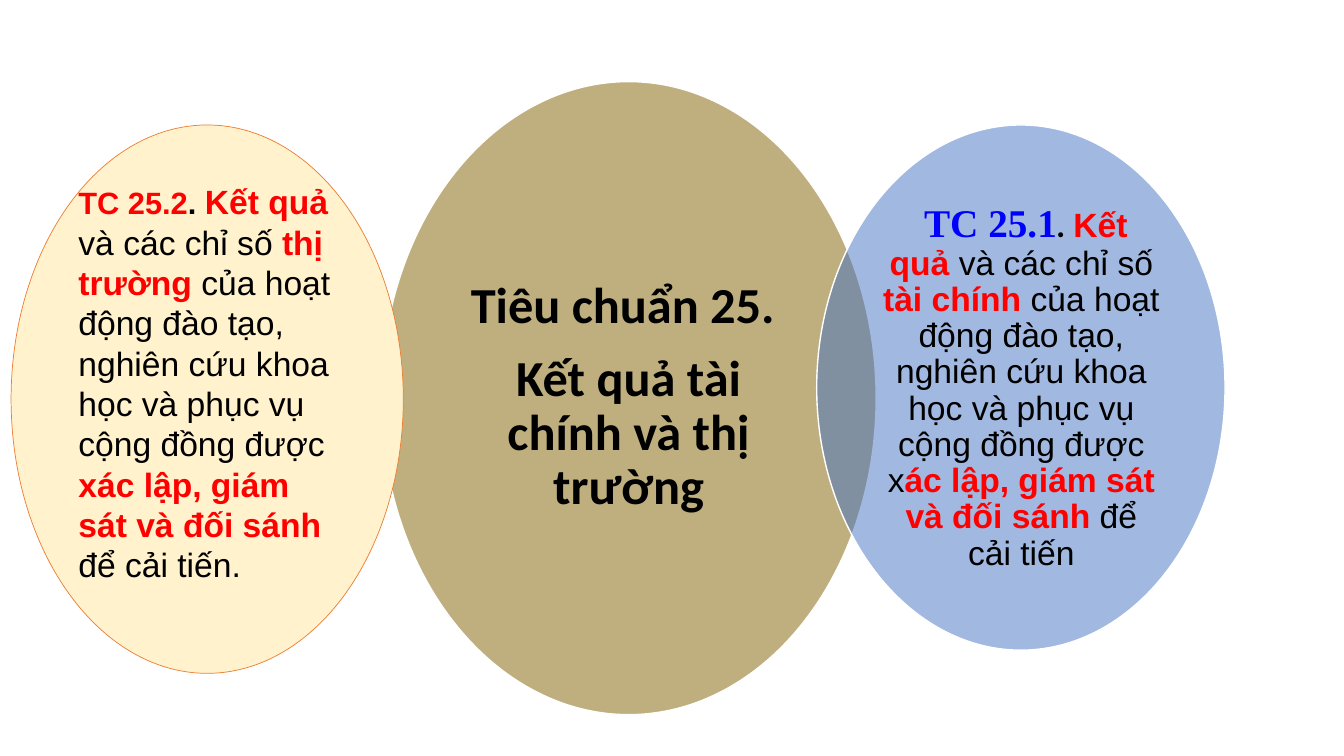
from lxml import etree
from pptx import Presentation
from pptx.dml.color import RGBColor
from pptx.enum.shapes import MSO_SHAPE
from pptx.enum.text import MSO_ANCHOR, PP_ALIGN
from pptx.oxml.ns import qn
from pptx.util import Inches, Pt

BLACK = RGBColor(0x00, 0x00, 0x00)
WHITE = RGBColor(0xFF, 0xFF, 0xFF)
RED = RGBColor(0xFF, 0x00, 0x00)
BLUE = RGBColor(0x00, 0x00, 0xFF)
OLIVE = RGBColor(0x80, 0x60, 0x00)
SKY = RGBColor(0x44, 0x72, 0xC4)
CREAM = RGBColor(0xFF, 0xF2, 0xCC)
ORANGE = RGBColor(0xED, 0x7D, 0x31)


def add_ellipse(page, left, top, width, height, fill, line, line_width, opacity=100):
    ellipse = page.shapes.add_shape(
        MSO_SHAPE.OVAL, Inches(left), Inches(top), Inches(width), Inches(height)
    )
    ellipse.shadow.inherit = False
    ellipse.fill.solid()
    ellipse.fill.fore_color.rgb = fill
    ellipse.line.color.rgb = line
    ellipse.line.width = Pt(line_width)
    if opacity < 100:
        color = ellipse.fill._xPr.find(qn("a:solidFill"))[0]
        etree.SubElement(color, qn("a:alpha")).set("val", str(opacity * 1000))
    return ellipse


def add_box(page, left, top, width, height):
    return page.shapes.add_textbox(
        Inches(left), Inches(top), Inches(width), Inches(height)
    )


def set_frame(box, inset, bottom=None):
    frame = box.text_frame
    frame.word_wrap = True
    frame.vertical_anchor = MSO_ANCHOR.MIDDLE
    frame.margin_left = frame.margin_right = Inches(inset[0])
    frame.margin_top = Inches(inset[1])
    frame.margin_bottom = Inches(inset[1] if bottom is None else bottom)
    return frame


def set_paragraph(para, align=PP_ALIGN.CENTER, spacing=0.9, after=0):
    para.alignment = align
    para.line_spacing = spacing
    para.space_after = Pt(after)
    return para


def add_span(para, text, size=24, font="Arial", color=BLACK, bold=False, italic=False):
    span = para.add_run()
    span.text = text
    span.font.size = Pt(size)
    span.font.name = font
    span.font.color.rgb = color
    span.font.bold = bold
    span.font.italic = italic


def add_phrases(para, phrases):
    for text, is_key in phrases:
        add_span(para, text, color=RED if is_key else BLACK, bold=is_key)


def add_standard(page):
    add_ellipse(page, 3.78, 0.81, 4.91, 6.28, OLIVE, WHITE, 1, opacity=50)
    frame = set_frame(add_box(page, 4.5, 1.73, 3.47, 4.44), (0.05, 0.05))
    heading = set_paragraph(frame.paragraphs[0], after=12.6)
    title = set_paragraph(frame.add_paragraph(), after=12.6)
    add_span(heading, "Tiêu chuẩn 25. ", size=36, font="Calibri", bold=True)
    add_span(title, "Kết quả tài chính và thị trường", size=36, font="Calibri", bold=True)


def add_finance_criterion(page):
    add_ellipse(page, 8.1, 1.24, 4.05, 5.21, SKY, WHITE, 1, opacity=50)
    frame = set_frame(add_box(page, 8.7, 2.01, 2.86, 3.68), (0.04, 0.04))
    para = set_paragraph(frame.paragraphs[0], after=8.4)
    add_span(para, " TC 25.1", size=28, font="Times New Roman", color=BLUE, bold=True)
    add_span(para, ". ", font="Calibri", bold=True, italic=True)
    add_phrases(para, [
        ("Kết quả ", True),
        ("và các chỉ số ", False),
        ("tài chính", True),
        (" của hoạt động đào tạo, nghiên cứu khoa học và phục vụ cộng đồng được x", False),
        ("ác lập, giám sát và đối sánh", True),
        (" để cải tiến", False),
    ])


def add_market_criterion(page):
    ellipse = add_ellipse(page, 0.11, 1.24, 3.89, 5.44, CREAM, ORANGE, 0.5)
    frame = set_frame(ellipse, (0.1, 0.05), bottom=0.37)
    para = set_paragraph(frame.paragraphs[0], align=PP_ALIGN.LEFT, spacing=1.0)
    add_span(para, "TC 25.2", size=22, color=RED, bold=True)
    add_span(para, ". ", size=22, bold=True)
    add_phrases(para, [
        ("Kết quả ", True),
        ("và các chỉ số ", False),
        ("thị trường", True),
        (" của hoạt động đào tạo, nghiên cứu khoa học và phục vụ cộng đồng được ", False),
        ("xác lập, giám sát và đối sánh ", True),
        ("để cải tiến.", False),
    ])


def main():
    deck = Presentation()
    deck.slide_width = Inches(13.33)
    deck.slide_height = Inches(7.5)
    page = deck.slides.add_slide(deck.slide_layouts[6])
    add_standard(page)
    add_finance_criterion(page)
    add_market_criterion(page)
    deck.save("out.pptx")


if __name__ == "__main__":
    main()
